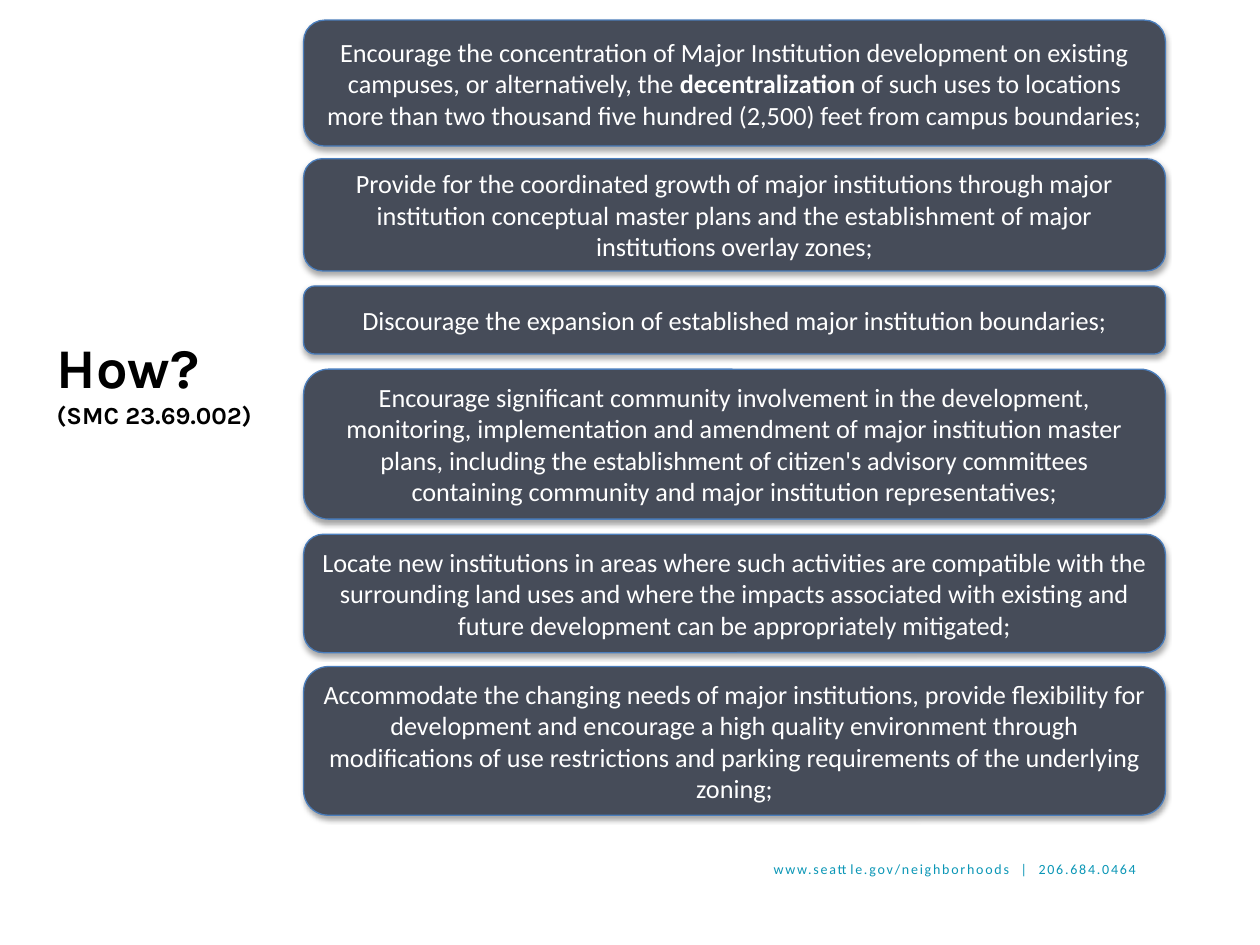
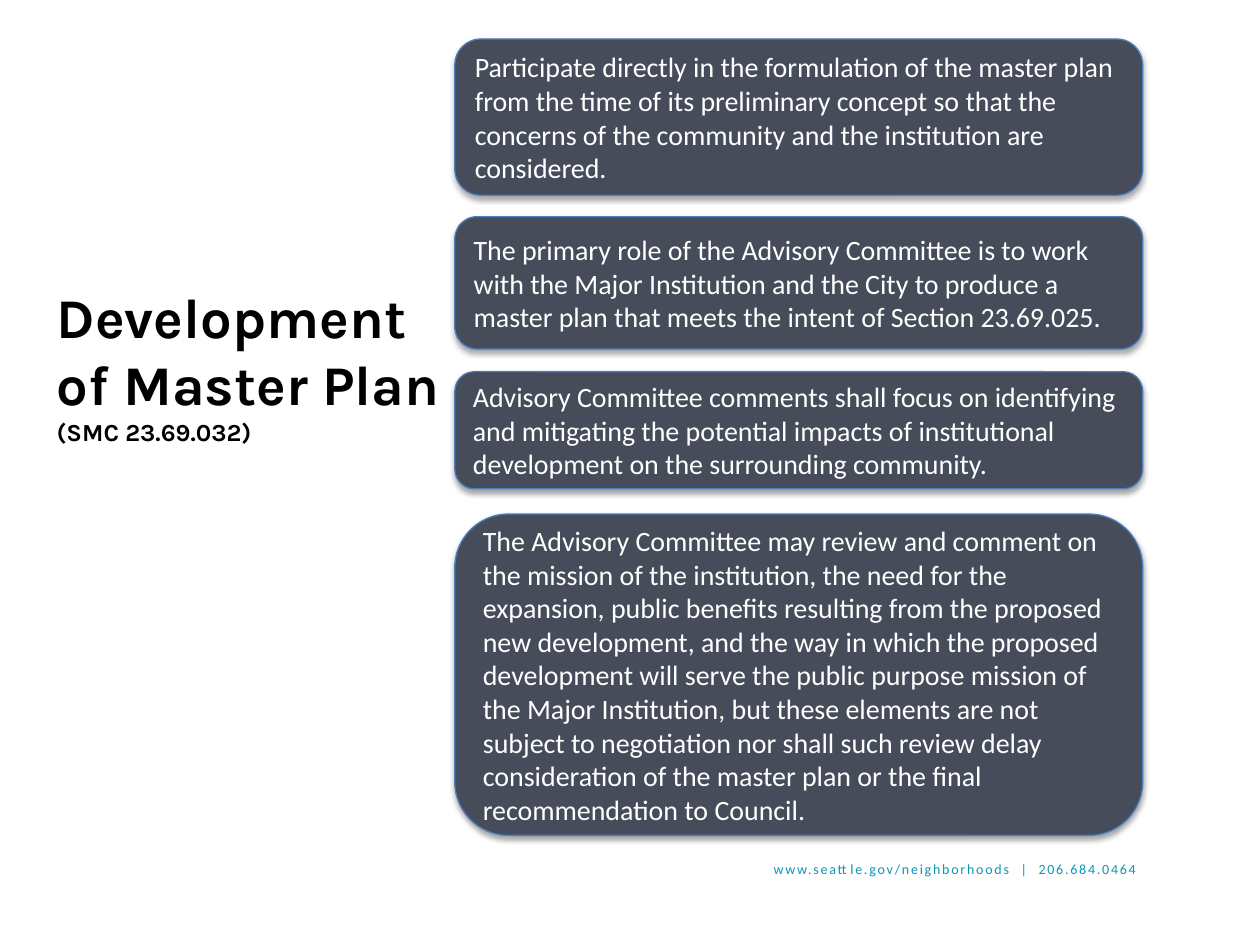
from dataclasses import dataclass

import pptx
import pptx.dml.color
import pptx.enum.shapes
import pptx.enum.text
import pptx.oxml.ns
import pptx.presentation
import pptx.slide
import pptx.text.text
import pptx.util
from lxml import etree
from pptx.util import Inches

RGBColor = pptx.dml.color.RGBColor
Alignment = pptx.enum.text.PP_ALIGN
Anchor = pptx.enum.text.MSO_ANCHOR
qualified = pptx.oxml.ns.qn


@dataclass(frozen=True)
class Theme:
    card_fill: RGBColor = RGBColor(0x46, 0x4C, 0x59)
    card_line: RGBColor = RGBColor(0x4B, 0x7E, 0xBC)
    card_text: RGBColor = RGBColor(0xFF, 0xFF, 0xFF)
    title_text: RGBColor = RGBColor(0x00, 0x00, 0x00)
    footer_text: RGBColor = RGBColor(0x0A, 0x96, 0xB6)
    shadow: str = "000000"
    title_font: str = "Karla"
    body_font: str = "Calibri"
    title_size: float = 32
    citation_size: float = 14
    footer_size: float = 8
    card_line_width: float = 0.75


THEME = Theme()
FOOTER = "www.seattle.gov/neighborhoods  |  206.684.0464"


@dataclass(frozen=True)
class Card:
    top: float
    height: float
    text: str
    emphasis: str = ""


@dataclass(frozen=True)
class CardSlide:
    title: str
    citation: str
    title_width: float
    title_inset: float
    card_left: float
    card_width: float
    card_size: float
    alignment: Alignment
    cards: tuple[Card, ...]


HOW = CardSlide(
    title="How?",
    citation="(SMC 23.69.002)",
    title_width=2.69,
    title_inset=1.16,
    card_left=2.41,
    card_width=6.84,
    card_size=15,
    alignment=Alignment.CENTER,
    cards=(
        Card(0.16, 1,
             "Encourage the concentration of Major Institution development on existing "
             "campuses, or alternatively, the decentralization of such uses to locations "
             "more than two thousand five hundred (2,500) feet from campus boundaries;",
             emphasis="decentralization"),
        Card(1.26, 0.89,
             "Provide for the coordinated growth of major institutions through major "
             "institution conceptual master plans and the establishment of major "
             "institutions overlay zones;"),
        Card(2.27, 0.54,
             "Discourage the expansion of established major institution boundaries;"),
        Card(2.93, 1.19,
             "Encourage significant community involvement in the development, "
             "monitoring, implementation and amendment of major institution master "
             "plans, including the establishment of citizen's advisory committees "
             "containing community and major institution representatives;"),
        Card(4.24, 0.94,
             "Locate new institutions in areas where such activities are compatible with "
             "the surrounding land uses and where the impacts associated with existing "
             "and future development can be appropriately mitigated;"),
        Card(5.29, 1.18,
             "Accommodate the changing needs of major institutions, provide flexibility "
             "for development and encourage a high quality environment through "
             "modifications of use restrictions and parking requirements of the "
             "underlying zoning;"),
    ),
)

MASTER_PLAN = CardSlide(
    title="Development of Master Plan",
    citation="(SMC 23.69.032)",
    title_width=3.27,
    title_inset=0.76,
    card_left=3.61,
    card_width=5.46,
    card_size=16,
    alignment=Alignment.LEFT,
    cards=(
        Card(0.31, 1.24,
             "Participate directly in the formulation of the master plan from the time "
             "of its preliminary concept so that the concerns of the community and the "
             "institution are considered."),
        Card(1.72, 1.05,
             "The primary role of the Advisory Committee is to work with the Major "
             "Institution and the City to produce a master plan that meets the intent "
             "of Section 23.69.025."),
        Card(2.95, 0.93,
             "Advisory Committee comments shall focus on identifying and mitigating the "
             "potential impacts of institutional development on the surrounding "
             "community."),
        Card(4.08, 2.55,
             "The Advisory Committee may review and comment on the mission of the "
             "institution, the need for the expansion, public benefits resulting from "
             "the proposed new development, and the way in which the proposed "
             "development will serve the public purpose mission of the Major "
             "Institution, but these elements are not subject to negotiation nor shall "
             "such review delay consideration of the master plan or the final "
             "recommendation to Council."),
    ),
)


def style_paragraph(paragraph: pptx.text.text._Paragraph, font_name: str, size: float,
                    color: RGBColor, alignment: Alignment, bold: bool = False) -> None:
    paragraph.alignment = alignment
    font = paragraph.font
    font.name = font_name
    font.size = pptx.util.Pt(size)
    font.bold = bold
    font.color.rgb = color


def add_title(slide: pptx.slide.Slide, content: CardSlide) -> None:
    title = slide.shapes.title
    title.left, title.top = Inches(0.35), Inches(1.48)
    title.width, title.height = Inches(content.title_width), Inches(4.87)
    frame = title.text_frame
    frame.auto_size = pptx.enum.text.MSO_AUTO_SIZE.NONE
    frame.vertical_anchor = Anchor.TOP
    frame.margin_top = Inches(content.title_inset)
    frame.text = f"{content.title}\n{content.citation}"
    for paragraph, size in zip(frame.paragraphs, (THEME.title_size, THEME.citation_size)):
        style_paragraph(paragraph, THEME.title_font, size, THEME.title_text,
                        Alignment.LEFT, bold=True)


def add_soft_shadow(shape: pptx.shapes.autoshape.Shape) -> None:
    """Replace the theme shadow with a soft one falling straight down."""
    shape.shadow.inherit = False
    effects = shape.element.spPr.find(qualified("a:effectLst"))
    shadow = etree.SubElement(effects, qualified("a:outerShdw"), blurRad="40000",
                              dist="23000", dir="5400000", rotWithShape="0")
    color = etree.SubElement(shadow, qualified("a:srgbClr"), val=THEME.shadow)
    etree.SubElement(color, qualified("a:alpha"), val="35000")


def add_card(slide: pptx.slide.Slide, content: CardSlide, card: Card) -> None:
    shape = slide.shapes.add_shape(
        pptx.enum.shapes.MSO_SHAPE.ROUNDED_RECTANGLE,
        Inches(content.card_left), Inches(card.top),
        Inches(content.card_width), Inches(card.height))
    shape.fill.solid()
    shape.fill.fore_color.rgb = THEME.card_fill
    shape.line.color.rgb = THEME.card_line
    shape.line.width = pptx.util.Pt(THEME.card_line_width)
    add_soft_shadow(shape)

    frame = shape.text_frame
    frame.word_wrap = True
    frame.vertical_anchor = Anchor.MIDDLE
    paragraph = frame.paragraphs[0]
    style_paragraph(paragraph, THEME.body_font, content.card_size, THEME.card_text,
                    content.alignment)
    parts = card.text.partition(card.emphasis) if card.emphasis else (card.text,)
    for part in parts:
        run = paragraph.add_run()
        run.text = part
        if part == card.emphasis:
            run.font.bold = True


def add_footer(slide: pptx.slide.Slide) -> None:
    box = slide.shapes.add_textbox(Inches(5.45), Inches(6.78), Inches(3.67), Inches(0.35))
    box.text_frame.word_wrap = True
    paragraph = box.text_frame.paragraphs[0]
    style_paragraph(paragraph, THEME.body_font, THEME.footer_size, THEME.footer_text,
                    Alignment.RIGHT)
    run = paragraph.add_run()
    run.text = FOOTER
    run.font._element.set("spc", "100")


def add_card_slide(presentation: pptx.presentation.Presentation, content: CardSlide) -> None:
    title_only = presentation.slide_layouts.get_by_name("Title Only")
    slide = presentation.slides.add_slide(title_only)
    add_footer(slide)
    add_title(slide, content)
    for card in content.cards:
        add_card(slide, content, card)


def main() -> None:
    presentation = pptx.Presentation()
    presentation.slide_width = Inches(10)
    presentation.slide_height = Inches(7.5)
    for content in (HOW, MASTER_PLAN):
        add_card_slide(presentation, content)
    presentation.save("out.pptx")


if __name__ == "__main__":
    main()
